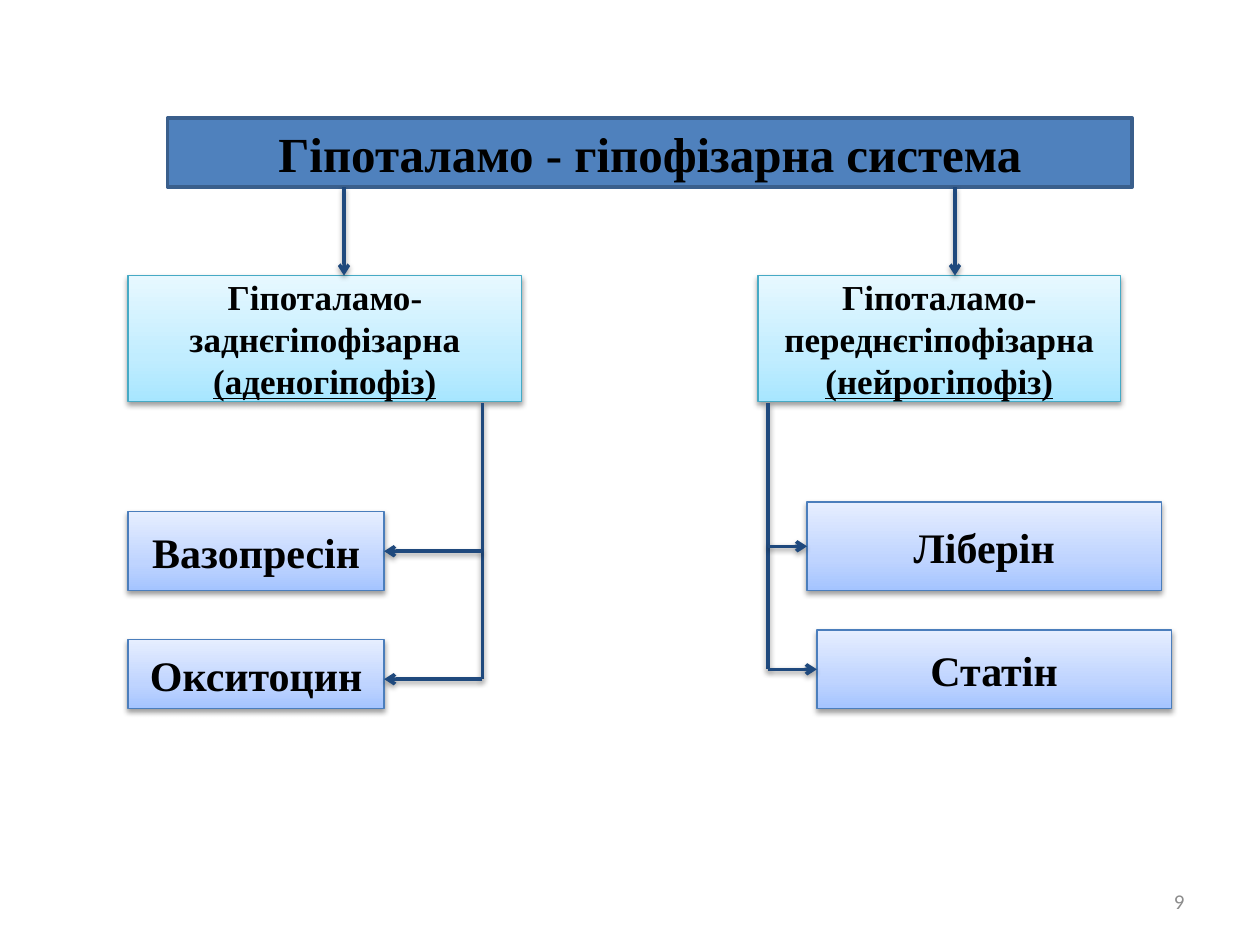
from copy import deepcopy
from dataclasses import dataclass

from lxml import etree
from pptx import Presentation
from pptx import util as u
from pptx.dml.color import RGBColor
from pptx.enum import shapes, text
from pptx.oxml.ns import qn


@dataclass(frozen=True)
class Theme:
    face: str = "Times New Roman"
    plain: str = "Calibri"
    ink: str = "000000"
    grey: str = "8C8C8C"
    bar: str = "4F81BD"
    rim: str = "3A5F8C"
    wire: str = "1F497D"
    # Line colour, then gradient stops from bottom to top
    aqua: tuple = ("46AAC5", "A7E6FF", "C1EDFF", "E7F8FF")
    blue: tuple = ("4B7EBC", "A4C4FF", "BFD4FF", "E6EEFF")
    head: int = 28
    group: int = 20
    item: int = 24
    small: int = 12


def rgb(code):
    return RGBColor.from_string(code)


class Chart:
    def __init__(self, theme, slide):
        self.theme, self.slide = theme, slide

    def shade(self, shape):
        """Add a soft shadow below a shape whose line is already set."""
        effects = etree.SubElement(shape._element.spPr, qn("a:effectLst"))
        outer = etree.SubElement(effects, qn("a:outerShdw"), blurRad="40000",
                                 dist="20000", dir="5400000", rotWithShape="0")
        tint = etree.SubElement(outer, qn("a:srgbClr"), val="000000")
        etree.SubElement(tint, qn("a:alpha"), val="38000")

    def edge(self, line, color, width):
        line.color.rgb = rgb(color)
        line.width = u.Pt(width)

    def label(self, shape, runs, size, face=None, color=None, bold=True,
              align=text.PP_ALIGN.CENTER):
        """Fill a shape with one paragraph; runs after the first are underlined."""
        frame = shape.text_frame
        frame.word_wrap = True
        frame.auto_size = text.MSO_AUTO_SIZE.NONE
        frame.vertical_anchor = text.MSO_ANCHOR.MIDDLE
        para = frame.paragraphs[0]
        para.alignment = align
        for i, words in enumerate(runs):
            run = para.add_run()
            run.text = words
            if i:
                run.font.underline = True
        font = para.font
        font.name, font.size, font.bold = face or self.theme.face, u.Pt(size), bold
        font.color.rgb = rgb(color or self.theme.ink)

    def title(self, words, x, y, w, h):
        bar = self.slide.shapes.title
        bar.left, bar.top, bar.width, bar.height = map(u.Pt, (x, y, w, h))
        bar.fill.solid()
        bar.fill.fore_color.rgb = rgb(self.theme.bar)
        self.edge(bar.line, self.theme.rim, 2)
        self.label(bar, [words], self.theme.head)

    def box(self, runs, size, look, x, y, w, h):
        box = self.slide.shapes.add_shape(
            shapes.MSO_SHAPE.RECTANGLE, *map(u.Pt, (x, y, w, h)))
        rim, *tones = look
        box.fill.gradient()
        box.fill.gradient_angle = 90
        stops = box._element.spPr.find(".//" + qn("a:gsLst"))
        stops.insert(1, deepcopy(stops[0]))
        for stop, tone, place in zip(box.fill.gradient_stops, tones, (0, 0.35, 1)):
            stop.color.rgb = rgb(tone)
            stop.position = place
        self.edge(box.line, rim, 0.75)
        self.shade(box)
        self.label(box, runs, size)
        return box

    def line(self, x1, y1, x2, y2, arrow=True, goal=None, side=None):
        wire = self.slide.shapes.add_connector(
            shapes.MSO_CONNECTOR.STRAIGHT, *map(u.Pt, (x1, y1, x2, y2)))
        if goal is not None:
            wire.end_connect(goal, side)
        self.edge(wire.line, self.theme.wire, 2)
        if arrow:
            ln = wire._element.spPr.find(qn("a:ln"))
            etree.SubElement(ln, qn("a:tailEnd"), type="arrow")
        self.shade(wire)

    def number(self, words, x, y, w, h):
        box = self.slide.shapes.add_textbox(*map(u.Pt, (x, y, w, h)))
        self.label(box, [words], self.theme.small, self.theme.plain,
                   self.theme.grey, False, text.PP_ALIGN.RIGHT)


def main():
    deck = Presentation()
    deck.slide_width, deck.slide_height = u.Pt(720), u.Pt(540)
    theme = Theme()
    chart = Chart(theme, deck.slides.add_slide(deck.slide_layouts[5]))

    # Title bar
    chart.title("Гіпоталамо - гіпофізарна система", 95.7, 67.5, 551.3, 39.4)

    # Two subsystems
    top, tall = 157.5, 72
    for runs, x, w in (
        (("Гіпоталамо-заднєгіпофізарна ", "(аденогіпофіз)"), 73.2, 225),
        (("Гіпоталамо-переднєгіпофізарна ", "(нейрогіпофіз)"), 433.2, 207.2),
    ):
        chart.box(runs, theme.group, theme.aqua, x, top, w, tall)

    # Hormones
    items = (
        ("Статін", 466.8, 360, 202.5, 45),
        ("Окситоцин", 73.2, 365.6, 146.3, 39.4),
        ("Вазопресін", 73.2, 292.5, 146.3, 45),
        ("Ліберін", 461.2, 286.9, 202.5, 50.6),
    )
    cells = {name: chart.box([name], theme.item, theme.blue, *place)
             for name, *place in items}

    # Arrows from the title bar
    for x in (196.6, 545.7):
        chart.line(x, 106.9, x, top)

    # Stems below the subsystems
    left, right, start = 275.6, 438.8, 230.4
    chart.line(left, start, left, 388.1, arrow=False)
    chart.line(right, start, right, 382.5, arrow=False)

    # Branches to the hormones
    chart.line(left, 315, 219.5, 315, goal=cells["Вазопресін"], side=1 + 2)
    chart.line(left, 388.1, 219.5, 388.1)
    chart.line(right, 312.2, 461.2, 312.2, goal=cells["Ліберін"], side=1)
    chart.line(right, 382.5, 466.8, 382.5, goal=cells["Статін"], side=1)

    # Slide number
    chart.number("9", 516, 500.5, 168, 28.8)
    deck.save("out.pptx")


if __name__ == "__main__":
    main()
